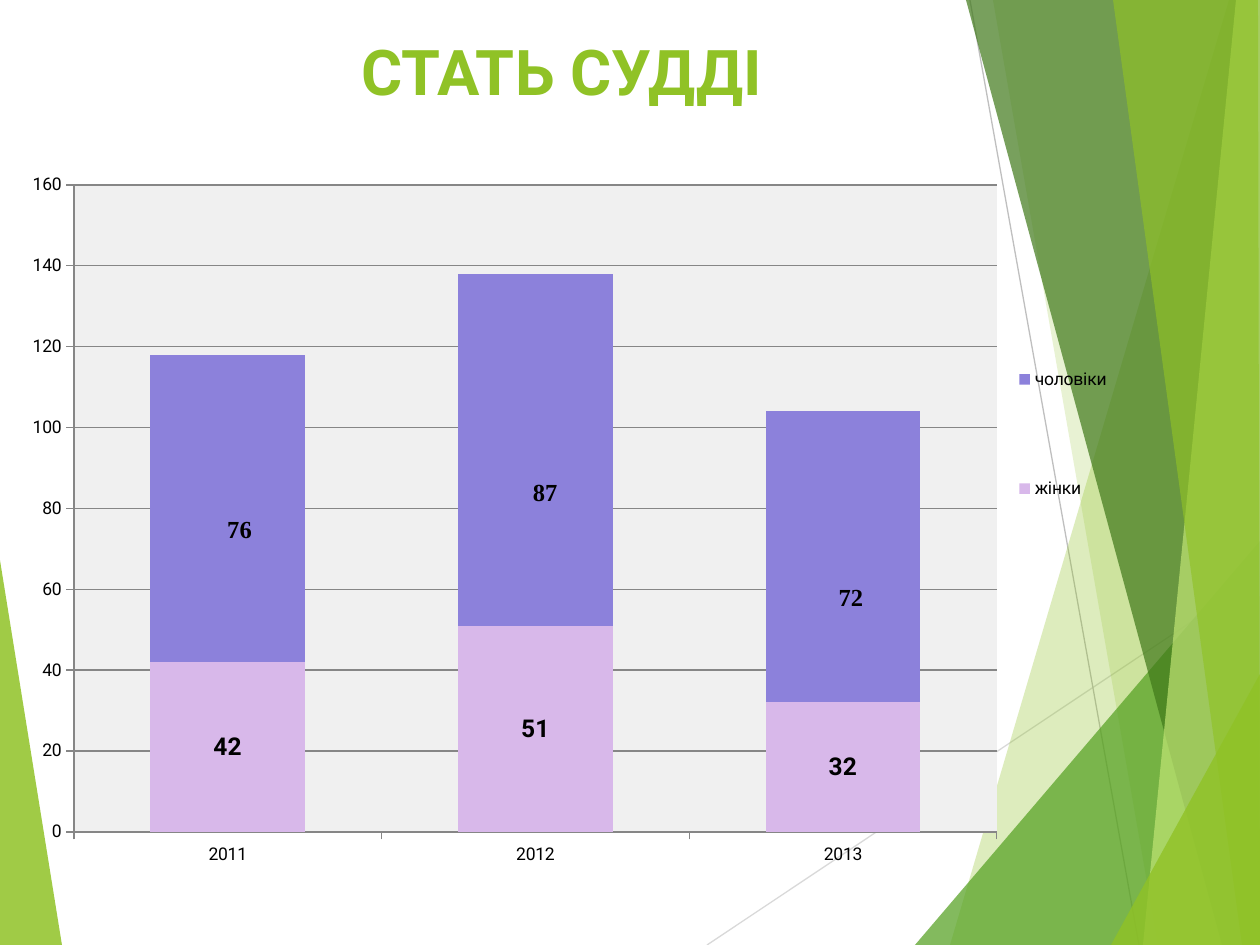
from typing import NamedTuple

from lxml.etree import SubElement
from pptx import Presentation
from pptx.chart.data import CategoryChartData
from pptx.dml.color import RGBColor
from pptx.enum.chart import XL_CHART_TYPE, XL_LEGEND_POSITION, XL_TICK_MARK
from pptx.enum.shapes import MSO_CONNECTOR
from pptx.enum.text import MSO_ANCHOR, MSO_AUTO_SIZE, PP_ALIGN
from pptx.oxml import parse_xml
from pptx.oxml.ns import nsdecls, qn
from pptx.util import Emu, Pt

PX = 914400 / 126
W, H = 1260, 945

BLACK = RGBColor(0x00, 0x00, 0x00)
LIME = RGBColor(0x90, 0xC2, 0x26)
GREEN = RGBColor(0x54, 0xA0, 0x21)
DARK_GREEN = RGBColor(0x3F, 0x78, 0x19)
PALE_LIME = RGBColor(0xC0, 0xE4, 0x74)
LIGHT_GREY = RGBColor(0xD9, 0xD9, 0xD9)
MID_GREY = RGBColor(0xBF, 0xBF, 0xBF)
AXIS_GREY = RGBColor(0x86, 0x86, 0x86)
PLOT_GREY = RGBColor(0xF0, 0xF0, 0xF0)
LILAC = RGBColor(0xD8, 0xB8, 0xEA)
VIOLET = RGBColor(0x8C, 0x81, 0xDB)


class Facet(NamedTuple):
    points: list[tuple[int, int]]
    color: RGBColor
    opacity: int


class Ray(NamedTuple):
    start: tuple[int, int]
    end: tuple[int, int]
    color: RGBColor


class Series(NamedTuple):
    name: str
    values: list[int]
    color: RGBColor
    label_font: str
    label_shifts: list[tuple[int, int]]


class Box(NamedTuple):
    x: int
    y: int
    w: int
    h: int


TITLE_BOX = Box(63, 26, 998, 119)
CHART_BOX = Box(0, 155, 1145, 790)
# Inside the chart frame
PLOT_BOX = Box(74, 30, 923, 647)
LEGEND_BOX = Box(1000, 125, 126, 308)

DECORATION = [
    Facet([(0, 560), (62, H), (0, H)], LIME, 85),
    Ray((707, H), (W, 576), LIGHT_GREY),
    Ray((970, 0), (1139, H), MID_GREY),
    Facet([(1229, 0), (950, H), (W, H), (W, 0)], LIME, 30),
    Facet([(993, 0), (1158, H), (W, H), (W, 0)], LIME, 20),
    Facet([(915, H), (W, 541), (W, H)], GREEN, 72),
    Facet([(966, 0), (1222, H), (W, H), (W, 0)], DARK_GREEN, 70),
    Facet([(1236, 0), (1143, H), (W, H), (W, 0)], PALE_LIME, 70),
    Facet([(1113, 0), (1242, H), (W, H), (1258, 0)], LIME, 65),
    Facet([(1111, H), (W, 674), (W, H)], LIME, 80),
]

YEARS = ["2011", "2012", "2013"]
SERIES = [
    Series("жінки", [42, 51, 32], LILAC, "Roboto", []),
    Series("чоловіки", [76, 87, 72], VIOLET, "Times New Roman",
           [(12, 22), (10, 43), (8, 41)]),
]


def px(n: float) -> Emu:
    return Emu(round(n * PX))


def add_facet(s, facet: Facet) -> None:
    builder = s.shapes.build_freeform(*facet.points[0], scale=PX)
    builder.add_line_segments(facet.points[1:], close=True)
    sp = builder.convert_to_shape()
    sp.shadow.inherit = False
    sp.fill.solid()
    sp.fill.fore_color.rgb = facet.color
    sp.line.fill.background()
    color = sp._element.spPr.find(".//" + qn("a:srgbClr"))
    SubElement(color, qn("a:alpha"), val=str(facet.opacity * 1000))


def add_ray(s, ray: Ray) -> None:
    line = s.shapes.add_connector(
        MSO_CONNECTOR.STRAIGHT, *map(px, ray.start + ray.end))
    line.line.color.rgb = ray.color
    line.line.width = Pt(0.75)
    SubElement(line._element.spPr, qn("a:effectLst"))


def set_layout(parent, index: int, box: tuple[int, ...], target: str = "") -> None:
    """Give a chart element a manual layout: a full box, or a shift (x, y)."""
    for old in parent.findall(qn("c:layout")):
        parent.remove(old)
    layout = parse_xml(f"<c:layout {nsdecls('c')}><c:manualLayout/></c:layout>")
    manual = layout[0]
    if target:
        SubElement(manual, qn("c:layoutTarget"), val=target)
    if len(box) == 4:
        for mode in ("xMode", "yMode"):
            SubElement(manual, qn(f"c:{mode}"), val="edge")
    frame = (CHART_BOX.w, CHART_BOX.h) * 2
    for key, length, whole in zip("xywh", box, frame):
        SubElement(manual, qn(f"c:{key}"), val=f"{length / whole:.4f}")
    parent.insert(index, layout)


def style_label(font, name: str) -> None:
    font.name = name
    font.size = Pt(14)
    font.bold = True
    font.color.rgb = BLACK


def style_series(ser, spec: Series) -> None:
    ser.format.fill.solid()
    ser.format.fill.fore_color.rgb = spec.color
    labels = ser.data_labels
    labels.show_value = True
    style_label(labels.font, spec.label_font)
    for leader in labels._element.findall(qn("c:showLeaderLines")):
        leader.set("val", "0")
    for i, shift in enumerate(spec.label_shifts):
        style_label(ser.points[i].data_label.font, spec.label_font)
        set_layout(labels._element.findall(qn("c:dLbl"))[i], 1, shift)


def add_judges_chart(s) -> None:
    data = CategoryChartData()
    data.categories = YEARS
    for spec in SERIES:
        data.add_series(spec.name, spec.values)
    chart = s.shapes.add_chart(
        XL_CHART_TYPE.COLUMN_STACKED, *map(px, CHART_BOX), data).chart
    chart.has_title = False
    chart.font.name = "Roboto"
    chart.font.size = Pt(10)
    chart.font.color.rgb = BLACK

    plot = chart.plots[0]
    plot.gap_width = 99
    plot.overlap = 100
    plot.vary_by_categories = False
    for ser, spec in zip(plot.series, SERIES):
        style_series(ser, spec)

    values = chart.value_axis
    values.minimum_scale, values.maximum_scale, values.major_unit = 0, 160, 20
    values.has_major_gridlines = True
    for axis in (values, chart.category_axis):
        axis.major_tick_mark = XL_TICK_MARK.OUTSIDE
        axis.format.line.color.rgb = AXIS_GREY
    values.major_gridlines.format.line.color.rgb = AXIS_GREY

    chart.has_legend = True
    chart.legend.position = XL_LEGEND_POSITION.RIGHT
    chart.legend.include_in_layout = False
    set_layout(chart.legend._element, 1, LEGEND_BOX)

    area = chart._chartSpace.chart.plotArea
    area.append(parse_xml(
        f'<c:spPr {nsdecls("c", "a")}><a:solidFill>'
        f'<a:srgbClr val="{PLOT_GREY}"/></a:solidFill></c:spPr>'))
    set_layout(area, 0, PLOT_BOX, "inner")


def set_title(s, text: str) -> None:
    title = s.shapes.title
    title.left, title.top, title.width, title.height = map(px, TITLE_BOX)
    tf = title.text_frame
    tf.text = text
    tf.auto_size = MSO_AUTO_SIZE.NONE
    tf.vertical_anchor = MSO_ANCHOR.TOP
    p = tf.paragraphs[0]
    p.alignment = PP_ALIGN.CENTER
    font = p.runs[0].font
    font.name, font.size, font.bold = "Roboto", Pt(36), True
    font.color.rgb = LIME
    s.shapes._spTree.append(title._element)


def main() -> None:
    prs = Presentation()
    prs.slide_width, prs.slide_height = px(W), px(H)
    s = prs.slides.add_slide(prs.slide_layouts[5])
    for item in DECORATION:
        if isinstance(item, Facet):
            add_facet(s, item)
        else:
            add_ray(s, item)
    set_title(s, "СТАТЬ СУДДІ")
    add_judges_chart(s)
    prs.save("out.pptx")


if __name__ == "__main__":
    main()
